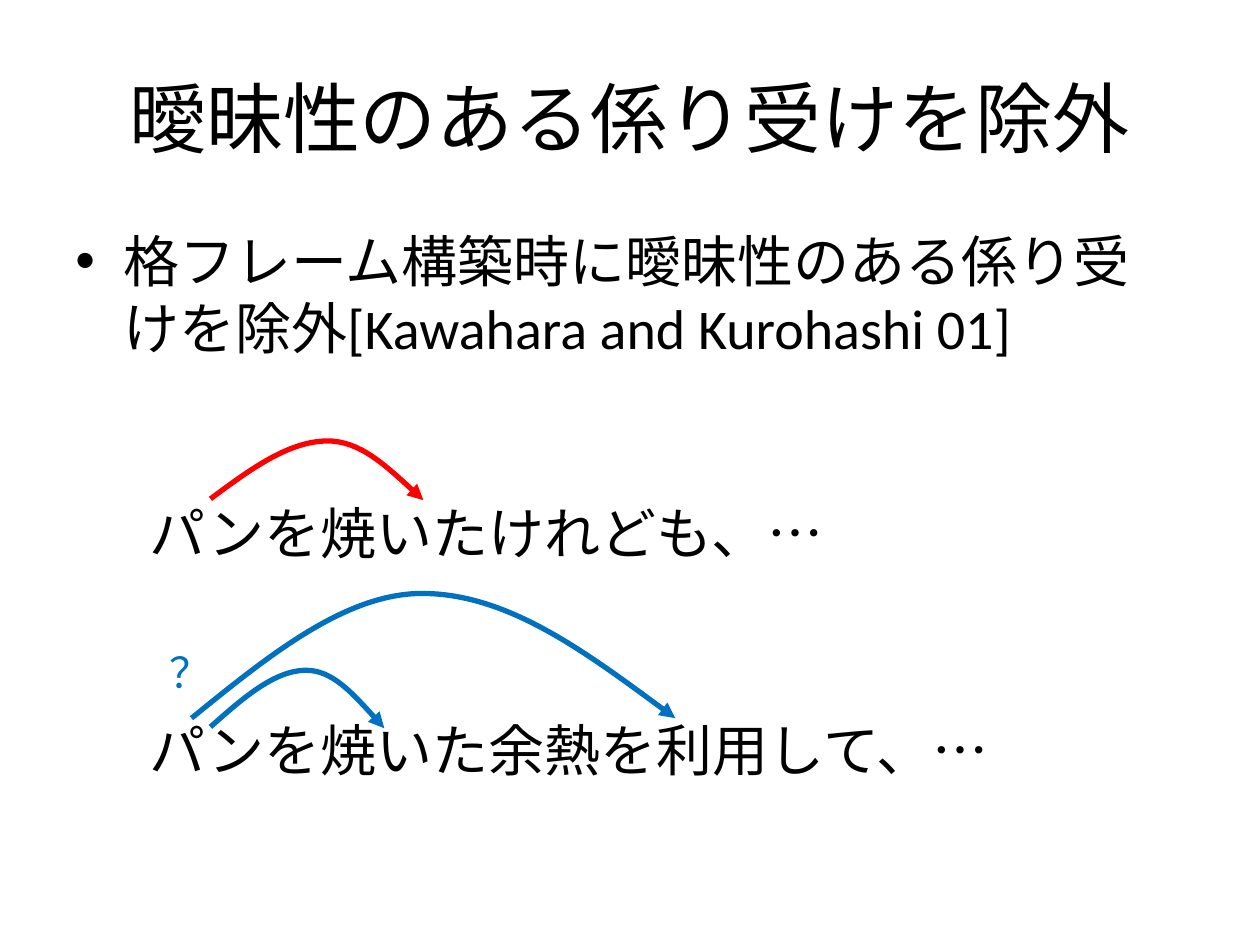
from dataclasses import dataclass

import lxml.etree
import pptx
import pptx.dml.color
import pptx.enum.lang
import pptx.enum.text
import pptx.oxml.ns
import pptx.slide
import pptx.text.text
import pptx.util
from pptx.util import Inches

COLORS = {"background": "FFFFFF", "text": "000000", "certain": "FF0000", "ambiguous": "0070C0"}
FONT = "Calibri"
qn = pptx.oxml.ns.qn
Point = tuple[float, float]


@dataclass
class Label:
    text: str
    left: float
    top: float
    width: float
    height: float
    size: int = 32
    color: str = "text"
    centered: bool = False
    bulleted: bool = False


@dataclass
class Dependency:
    start: Point
    apex: Point
    end: Point
    color: str


LABELS = [
    Label("曖昧性のある係り受けを除外", 0.5, 0.3, 9, 1.25, size=44, centered=True),
    Label("格フレーム構築時に曖昧性のある係り受けを除外[Kawahara and Kurohashi 01]",
          0.5, 1.75, 9, 4.95, bulleted=True),
    Label("パンを焼いたけれども、…", 1.09, 3.91, 6.02, 0.64),
    Label("パンを焼いた余熱を利用して、…", 1.09, 5.63, 7.81, 0.64),
    Label("？", 1.25, 5.08, 1.09, 0.5, size=24, color="ambiguous"),
]

DEPENDENCIES = [
    Dependency((1.67, 3.96), (2.6, 3.5), (3.36, 3.97), "certain"),
    Dependency((1.67, 5.77), (2.43, 5.32), (3.05, 5.78), "ambiguous"),
    Dependency((1.52, 5.7), (3.35, 4.71), (5.36, 5.7), "ambiguous"),
]


def rgb(name: str) -> pptx.dml.color.RGBColor:
    return pptx.dml.color.RGBColor.from_string(COLORS[name])


def add_bullet(paragraph: pptx.text.text._Paragraph) -> None:
    """Give the paragraph a hanging bullet and space before it."""
    properties = paragraph._p.get_or_add_pPr()
    properties.set("marL", str(Inches(0.38)))
    properties.set("indent", str(-Inches(0.38)))
    spacing = lxml.etree.SubElement(properties, qn("a:spcBef"))
    lxml.etree.SubElement(spacing, qn("a:spcPct")).set("val", "20000")
    lxml.etree.SubElement(properties, qn("a:buFont")).set("typeface", "Arial")
    lxml.etree.SubElement(properties, qn("a:buChar")).set("char", "•")


def add_label(slide: pptx.slide.Slide, label: Label) -> None:
    box = slide.shapes.add_textbox(
        Inches(label.left), Inches(label.top), Inches(label.width), Inches(label.height))
    frame = box.text_frame
    frame.word_wrap = True
    paragraph = frame.paragraphs[0]
    if label.centered:
        frame.vertical_anchor = pptx.enum.text.MSO_ANCHOR.MIDDLE
        paragraph.alignment = pptx.enum.text.PP_ALIGN.CENTER
    if label.bulleted:
        add_bullet(paragraph)
    run = paragraph.add_run()
    run.text = label.text
    run.font.name = FONT
    run.font.size = pptx.util.Pt(label.size)
    run.font.color.rgb = rgb(label.color)
    run.font.language_id = pptx.enum.lang.MSO_LANGUAGE_ID.JAPANESE


def add_dependency(slide: pptx.slide.Slide, dependency: Dependency) -> None:
    """Draw an arched arrow through start, apex and end."""
    start, apex, end = (
        (Inches(x), Inches(y)) for x, y in (dependency.start, dependency.apex, dependency.end))
    builder = slide.shapes.build_freeform(*start)
    builder.add_line_segments([apex, end], close=False)
    arc = builder.convert_to_shape()
    arc.shadow.inherit = False
    arc.fill.background()
    arc.line.color.rgb = rgb(dependency.color)
    arc.line.width = pptx.util.Pt(3)
    lxml.etree.SubElement(arc.line._get_or_add_ln(), qn("a:tailEnd")).set("type", "triangle")

    # Bend each straight segment: level at the apex, controls at thirds of its width
    outline = next(arc._element.iter(qn("a:path")))
    for segment in outline.findall(qn("a:lnTo")):
        outline.remove(segment)
    middle_left = (start[1] + apex[1]) // 2
    middle_right = (apex[1] + end[1]) // 2
    step_left = (apex[0] - start[0]) // 3
    step_right = (end[0] - apex[0]) // 3
    curves = [
        [(start[0] + step_left, middle_left), (apex[0] - step_left, apex[1]), apex],
        [(apex[0] + step_right, apex[1]), (end[0] - step_right, middle_right), end],
    ]
    for curve in curves:
        bend = lxml.etree.SubElement(outline, qn("a:cubicBezTo"))
        for x, y in curve:
            point = lxml.etree.SubElement(bend, qn("a:pt"))
            point.set("x", str(x - arc.left))
            point.set("y", str(y - arc.top))


def main() -> None:
    presentation = pptx.Presentation()
    presentation.slide_width = Inches(10)
    presentation.slide_height = Inches(7.5)
    slide = presentation.slides.add_slide(presentation.slide_layouts[6])
    slide.background.fill.solid()
    slide.background.fill.fore_color.rgb = rgb("background")

    # Title, body, example sentences and question mark
    for label in LABELS:
        add_label(slide, label)

    # Arrows from each modifier to its possible heads
    for dependency in DEPENDENCIES:
        add_dependency(slide, dependency)

    presentation.save("out.pptx")


if __name__ == "__main__":
    main()
